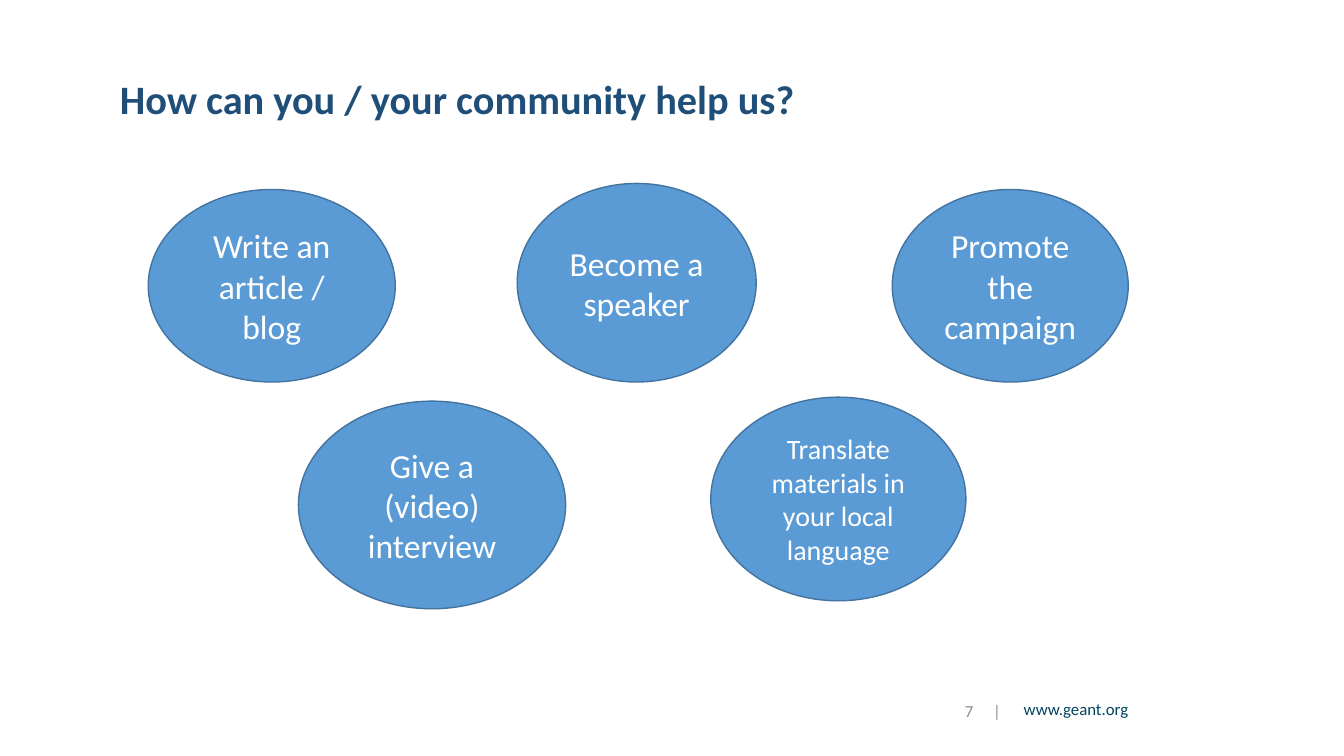
from lxml import etree
from pptx import Presentation
from pptx.dml.color import RGBColor
from pptx.enum.shapes import MSO_SHAPE
from pptx.enum.text import MSO_ANCHOR, MSO_AUTO_SIZE, PP_ALIGN
from pptx.oxml.ns import qn
from pptx.util import Inches, Pt


def rgb(value):
    return RGBColor.from_string(value)


def style(sp, size, color, align, anchor=MSO_ANCHOR.MIDDLE, bold=False):
    """Format the single paragraph of a shape and return it."""
    tf = sp.text_frame
    tf.word_wrap = True
    tf.auto_size = MSO_AUTO_SIZE.NONE
    tf.vertical_anchor = anchor
    p = tf.paragraphs[0]
    p.alignment = align
    for r in p.runs:
        r.font.name = "Calibri"
        r.font.size = Pt(size)
        r.font.bold = bold
        r.font.color.rgb = rgb(color)
    return p


prs = Presentation()
prs.slide_width = Inches(13.33)
prs.slide_height = Inches(7.5)
s = prs.slides.add_slide(prs.slide_layouts[5])

title = s.shapes.title
title.left, title.top = Inches(1.09), Inches(0.77)
title.width, title.height = Inches(10.82), Inches(0.47)
title.text_frame.text = "How can you / your community help us?"
style(title, 28.8, "1F4E79", PP_ALIGN.LEFT, bold=True).line_spacing = 0.9

# Ways to help: text, left, top, width, height, font size
ways = [
    ("Write an article / blog", 1.47, 1.88, 2.45, 1.91, 24),
    ("Give a (video) interview", 2.96, 3.98, 2.65, 2.06, 24),
    ("Become a speaker", 5.13, 1.82, 2.37, 1.97, 24),
    ("Translate materials in your local language", 7.05, 3.94, 2.53, 2.02, 20),
    ("Promote the campaign", 8.85, 1.88, 2.34, 1.91, 24),
]
for text, left, top, width, height, size in ways:
    sp = s.shapes.add_shape(MSO_SHAPE.OVAL, Inches(left), Inches(top),
                            Inches(width), Inches(height))
    sp.shadow.inherit = False
    sp.fill.solid()
    sp.fill.fore_color.rgb = rgb("5B9BD5")
    sp.line.color.rgb = rgb("43739E")
    sp.line.width = Pt(1)
    sp.text_frame.text = text
    style(sp, size, "FFFFFF", PP_ALIGN.CENTER)

# Footer: a tab stop separates the page number from the bar
number = s.shapes.add_textbox(Inches(9.29), Inches(6.87), Inches(0.73), Inches(0.36))
number.text_frame.margin_left = Inches(0.28)
number.text_frame.margin_right = 0
p = number.text_frame.paragraphs[0]
tabs = etree.SubElement(p._p.get_or_add_pPr(), qn("a:tabLst"))
etree.SubElement(tabs, qn("a:tab"), pos=str(Inches(0.28)), algn="l")
p.text = "7\t|"
style(number, 12, "8C8C8C", PP_ALIGN.LEFT)

site = s.shapes.add_textbox(Inches(9.61), Inches(6.91), Inches(1.68), Inches(0.37))
site.text_frame.text = "www.geant.org"
style(site, 12, "03435F", PP_ALIGN.RIGHT, MSO_ANCHOR.TOP).line_spacing = 0.9

prs.save("out.pptx")
